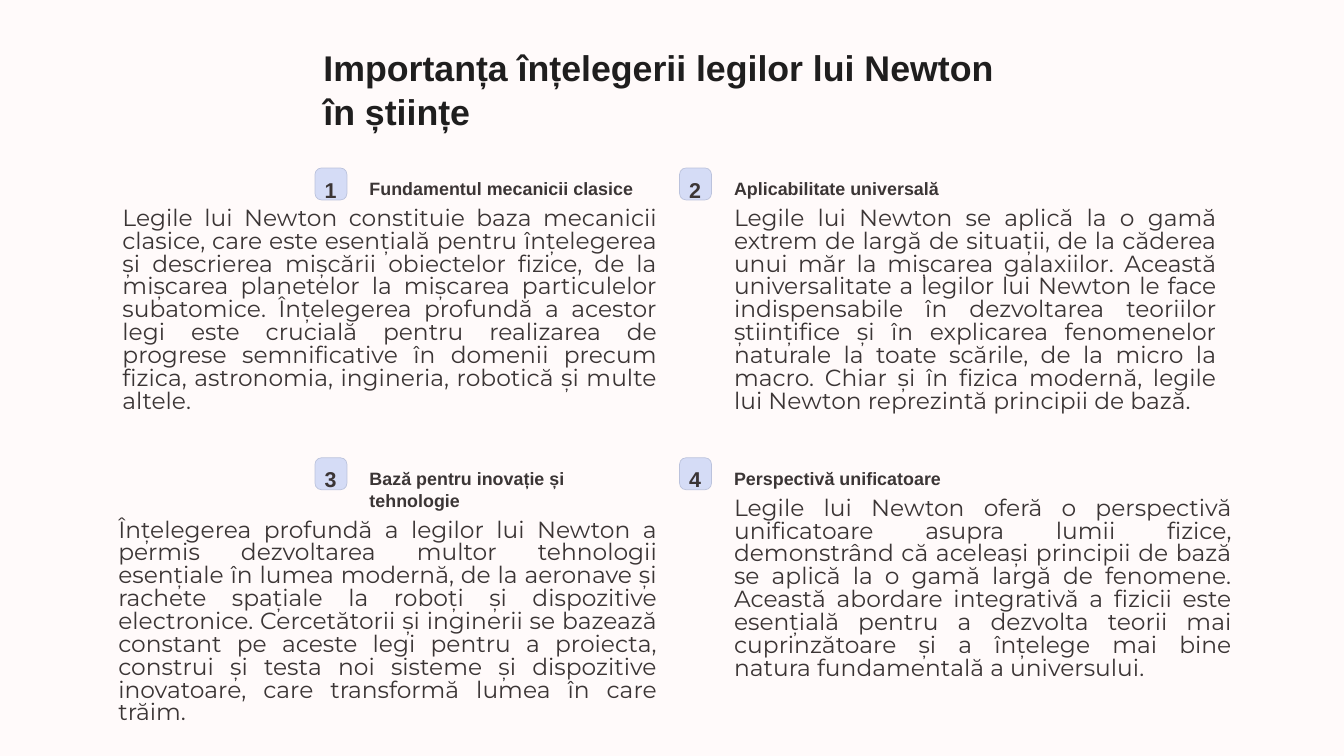
"""Build a slide on why understanding Newton's laws matters in science."""
from pptx import Presentation
from pptx.dml.color import RGBColor
from pptx.enum.shapes import MSO_SHAPE as Shape
from pptx.enum.text import MSO_ANCHOR as Anchor, MSO_AUTO_SIZE as AutoSize, PP_ALIGN as Align
from pptx.util import Inches, Pt

CREAM = RGBColor(0xFF, 0xFA, 0xFA)
BLACK = RGBColor(0x1F, 0x1E, 0x1E)
BROWN = RGBColor(0x3B, 0x35, 0x35)
LAVENDER = RGBColor(0xD5, 0xDC, 0xF6)
BORDER = RGBColor(0xBB, 0xC2, 0xDC)

COLUMNS = [3.75, 8.09]
ROWS = [2, 5.45]
BADGE = 0.38

POINTS = [
    ("Fundamentul mecanicii clasice", 3.35, False, (1.36, 2.43, 6.56, 2.72),
     "Legile lui Newton constituie baza mecanicii clasice, care este esențială pentru "
     "înțelegerea și descrierea mișcării obiectelor fizice, de la mișcarea planetelor la "
     "mișcarea particulelor subatomice. Înțelegerea profundă a acestor legi este crucială "
     "pentru realizarea de progrese semnificative în domenii precum fizica, astronomia, "
     "ingineria, robotică și multe altele."),
    ("Aplicabilitate universală", 2.61, False, (8.64, 2.43, 5.94, 2.45),
     "Legile lui Newton se aplică la o gamă extrem de largă de situații, de la căderea unui "
     "măr la mișcarea galaxiilor. Această universalitate a legilor lui Newton le face "
     "indispensabile în dezvoltarea teoriilor științifice și în explicarea fenomenelor "
     "naturale la toate scările, de la micro la macro. Chiar și în fizica modernă, legile "
     "lui Newton reprezintă principii de bază."),
    ("Bază pentru inovație și tehnologie", 3.61, True, (1.31, 6.14, 6.61, 2.45),
     "Înțelegerea profundă a legilor lui Newton a permis dezvoltarea multor tehnologii "
     "esențiale în lumea modernă, de la aeronave și rachete spațiale la roboți și dispozitive "
     "electronice. Cercetătorii și inginerii se bazează constant pe aceste legi pentru a "
     "proiecta, construi și testa noi sisteme și dispozitive inovatoare, care transformă "
     "lumea în care trăim."),
    ("Perspectivă unificatoare", 2.61, False, (8.64, 5.88, 6.12, 2.18),
     "Legile lui Newton oferă o perspectivă unificatoare asupra lumii fizice, demonstrând că "
     "aceleași principii de bază se aplică la o gamă largă de fenomene. Această abordare "
     "integrativă a fizicii este esențială pentru a dezvolta teorii mai cuprinzătoare și a "
     "înțelege mai bine natura fundamentală a universului."),
]


def write(box, text, size, spacing, font="Arial", color=BROWN, bold=True,
          align=Align.LEFT, wrap=True):
    frame = box.text_frame
    frame.word_wrap = wrap
    frame.auto_size = AutoSize.NONE
    frame.vertical_anchor = Anchor.TOP
    para = frame.paragraphs[0]
    para.alignment = align
    para.line_spacing = Pt(spacing)
    span = para.add_run()
    span.text = text
    span.font.name = font
    span.font.size = Pt(size)
    span.font.bold = bold
    span.font.color.rgb = color


def add_box(left, top, width, height):
    return page.shapes.add_textbox(Inches(left), Inches(top), Inches(width), Inches(height))


deck = Presentation()
deck.slide_width = Inches(16)
deck.slide_height = Inches(9)
page = deck.slides.add_slide(deck.slide_layouts[5])
page.background.fill.solid()
page.background.fill.fore_color.rgb = CREAM

title = page.shapes.title
title.left, title.top = Inches(3.75), Inches(0.47)
title.width, title.height = Inches(8.5), Inches(1.06)
write(title, "Importanța înțelegerii legilor lui Newton în științe", 30.6, 38.3, color=BLACK)

for index, (heading, width, wrap, body_area, body) in enumerate(POINTS):
    left, top = COLUMNS[index % 2], ROWS[index // 2]
    badge = page.shapes.add_shape(Shape.ROUNDED_RECTANGLE, Inches(left), Inches(top),
                                  Inches(BADGE), Inches(BADGE))
    badge.shadow.inherit = False
    badge.adjustments[0] = 0.2
    badge.fill.solid()
    badge.fill.fore_color.rgb = LAVENDER
    badge.line.color.rgb = BORDER
    badge.line.width = Pt(0.6)

    number = add_box(left + 0.11, top + 0.04, 0.15, 0.32)
    write(number, str(index + 1), 18.4, 23, align=Align.CENTER, wrap=False)
    label = add_box(left + 0.55, top + 0.06, width, 0.53 if wrap else 0.27)
    write(label, heading, 15.3, 19.1, wrap=wrap)
    write(add_box(*body_area), body, 20, 19.6, font="Montserrat", bold=False,
          align=Align.JUSTIFY)

deck.save("out.pptx")
